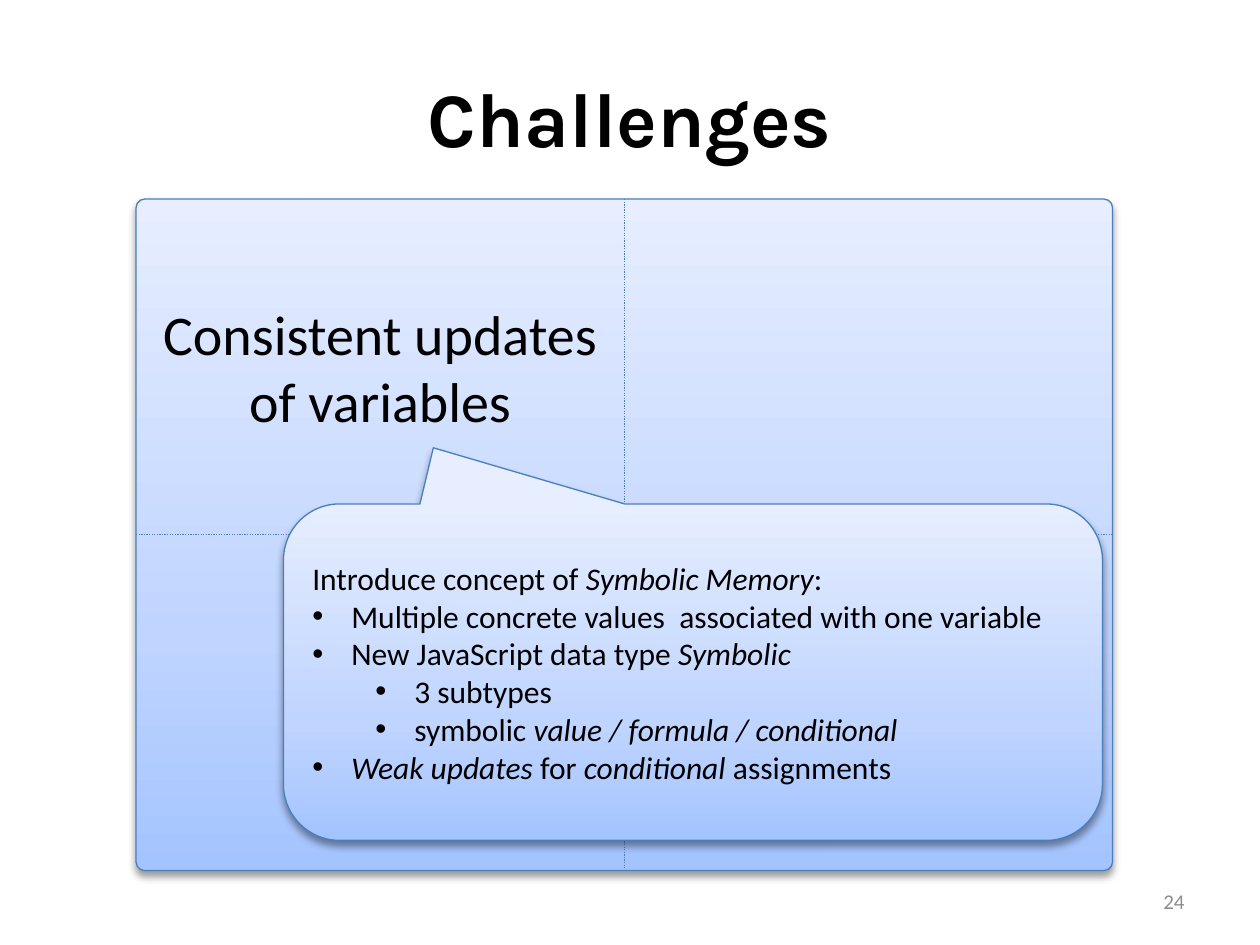
from lxml import etree
from pptx import Presentation
from pptx.dml.color import RGBColor
from pptx.enum.dml import MSO_LINE
from pptx.enum.shapes import MSO_CONNECTOR, MSO_SHAPE
from pptx.enum.text import MSO_ANCHOR, PP_ALIGN
from pptx.oxml.ns import qn
from pptx.util import Inches, Pt

LINE = "4B7EBC"
STOPS = [(0, "A4C4FF"), (35, "BFD4FF"), (100, "E6EEFF")]
PANEL = (1.08, 1.58, 7.75, 5.33)
CALLOUT = (2.25, 4, 6.5, 2.67)

# Each line: (level, or None for no bullet; [(text, italic), ...])
NOTES = [
    (None, [("Introduce concept of ", False), ("Symbolic Memory", True), (":", False)]),
    (0, [("Multiple concrete values  associated with one variable", False)]),
    (0, [("New JavaScript data type ", False), ("Symbolic", True)]),
    (1, [("3 subtypes", False)]),
    (1, [("symbolic ", False), ("value / formula / conditional", True)]),
    (0, [("Weak updates", True), (" for ", False), ("conditional", True),
         (" assignments", False)]),
]


def rgb(color):
    return RGBColor.from_string(color)


def inches(box):
    return [Inches(v) for v in box]


def sub(parent, tag, **attrs):
    return etree.SubElement(parent, qn(tag), {k: str(v) for k, v in attrs.items()})


def add_run(p, text, size, color="000000", font="Calibri", **formats):
    r = p.add_run()
    r.text = text
    for name, value in dict(formats, size=Pt(size), name=font).items():
        setattr(r.font, name, value)
    r.font.color.rgb = rgb(color)


def style_line(line):
    line.color.rgb = rgb(LINE)
    line.width = Pt(0.75)


def add_panel(shapes, kind, box, adjustments):
    """Add a shape with the blue gradient, thin outline and soft shadow."""
    sp = shapes.add_shape(kind, *inches(box))
    for i, value in enumerate(adjustments):
        sp.adjustments[i] = value
    sp.fill.gradient()
    sp.fill.gradient_angle = 90
    stops = sp.element.spPr.find(".//" + qn("a:gsLst"))
    for stop in list(stops):
        stops.remove(stop)
    for pos, color in STOPS:
        sub(sub(stops, "a:gs", pos=pos * 1000), "a:srgbClr", val=color)
    style_line(sp.line)
    effects = sub(sp.element.spPr, "a:effectLst")
    shadow = sub(effects, "a:outerShdw", blurRad=Pt(4), dist=Pt(3),
                 dir=90 * 60000, rotWithShape=0)
    sub(sub(shadow, "a:srgbClr", val="000000"), "a:alpha", val=40000)
    return sp


def add_text(s, box, lines, size, align, color="000000"):
    tf = s.shapes.add_textbox(*inches(box)).text_frame
    tf.word_wrap = True
    tf.vertical_anchor = MSO_ANCHOR.MIDDLE
    for i, line in enumerate(lines):
        p = tf.add_paragraph() if i else tf.paragraphs[0]
        p.alignment = align
        add_run(p, line, size, color)


def add_title(s, box, text):
    title = s.shapes.title
    title.left, title.top, title.width, title.height = inches(box)
    tf = title.text_frame
    tf.vertical_anchor = MSO_ANCHOR.MIDDLE
    tf.paragraphs[0].alignment = PP_ALIGN.CENTER
    add_run(tf.paragraphs[0], text, 44, font="Karla", bold=True)


def add_quadrants(s, box, lines):
    """Panel split by dotted lines, with text in its upper left quarter."""
    x, y, w, h = box
    group = s.shapes.add_group_shape()
    add_panel(group.shapes, MSO_SHAPE.ROUNDED_RECTANGLE, box, [0.013])
    mid_x, mid_y = x + w / 2, y + h / 2
    for ends in [(mid_x, y, mid_x, y + h), (x, mid_y, x + w, mid_y)]:
        divider = group.shapes.add_connector(MSO_CONNECTOR.STRAIGHT, *inches(ends))
        style_line(divider.line)
        divider.line.dash_style = MSO_LINE.ROUND_DOT
        sub(divider.element.spPr, "a:effectLst")
    add_text(s, (x, y, w / 2, h / 2), lines, 32, PP_ALIGN.CENTER)


def add_callout(s, box, notes):
    sp = add_panel(s.shapes, MSO_SHAPE.ROUNDED_RECTANGULAR_CALLOUT, box,
                   [-0.317, -0.667, 0.167])
    tf = sp.text_frame
    tf.word_wrap = True
    tf.vertical_anchor = MSO_ANCHOR.MIDDLE
    for i, (level, runs) in enumerate(notes):
        p = tf.add_paragraph() if i else tf.paragraphs[0]
        p.alignment = PP_ALIGN.LEFT
        if level is not None:
            p.level = level
            pPr = p._p.get_or_add_pPr()
            pPr.set("marL", str(Inches(0.31 + 0.5 * level)))
            pPr.set("indent", str(Inches(-0.31)))
            sub(pPr, "a:buFont", typeface="Arial")
            sub(pPr, "a:buChar", char="•")
        for text, italic in runs:
            add_run(p, text, 18, italic=italic)


def main():
    prs = Presentation()
    prs.slide_width, prs.slide_height = Inches(10), Inches(7.5)
    s = prs.slides.add_slide(prs.slide_layouts[5])
    add_title(s, (0.5, 0.3, 9, 1.25), "Challenges")
    # Page number
    add_text(s, (7.17, 6.95, 2.33, 0.4), ["24"], 12, PP_ALIGN.RIGHT, "8C8C8C")
    add_quadrants(s, PANEL, ["Consistent updates", "of variables"])
    add_callout(s, CALLOUT, NOTES)
    prs.save("out.pptx")


if __name__ == "__main__":
    main()
